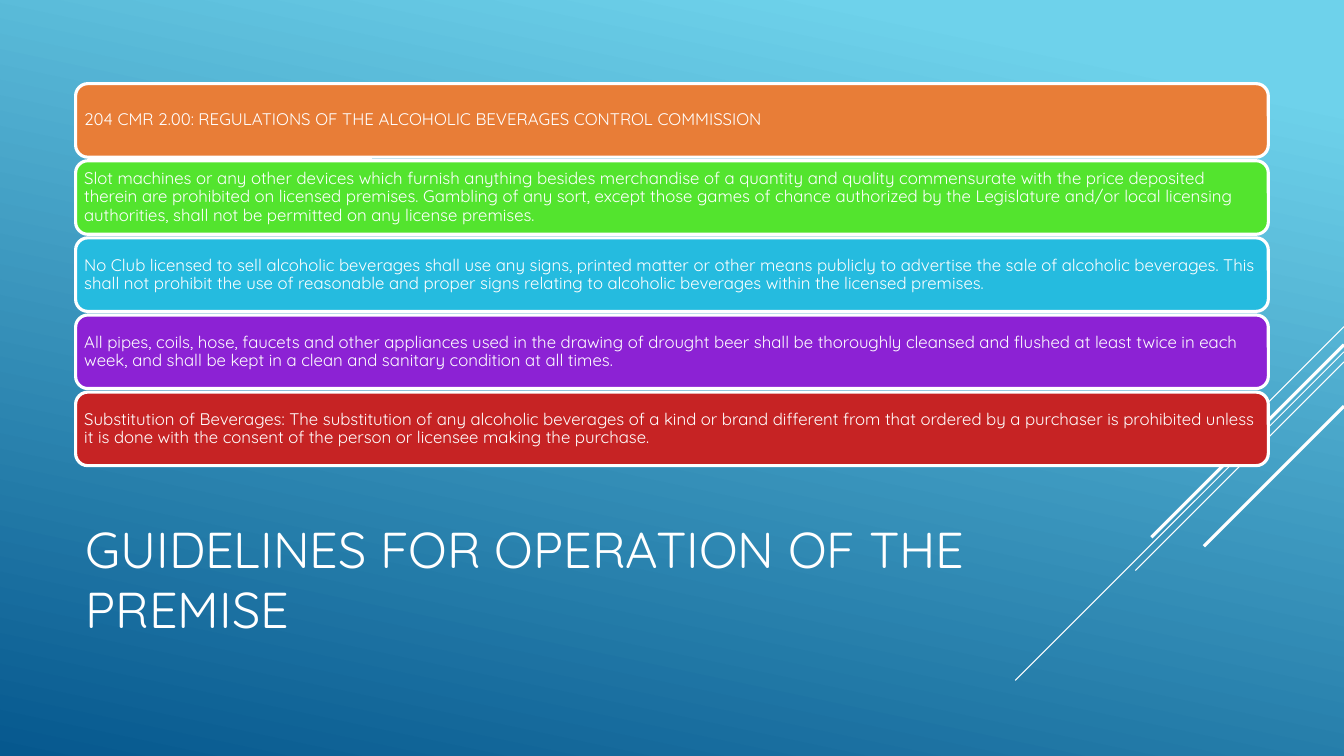
"""Build the slide on guidelines for operation of the premise."""
from lxml import etree
from pptx import Presentation
from pptx import util as u
from pptx.dml.color import RGBColor
from pptx.enum import shapes, text
from pptx.oxml.ns import qn

FONT = "Quicksand"
WHITE = "FFFFFF"
TITLE = "GUIDELINES FOR OPERATION OF THE PREMISE"
TITLE_BOX = (0.75, 4.91, 9.33, 1.65)
BACKGROUND = [("6ED2EB", 0.1), ("06588E", 1)]
BACKGROUND_ANGLE = 258
RULES = [
    ("E87D37", "204 CMR 2.00: REGULATIONS OF THE ALCOHOLIC BEVERAGES CONTROL COMMISSION"),
    ("53E42E", "Slot machines or any other devices which furnish anything besides merchandise of a quantity and quality commensurate with the price deposited therein are prohibited on licensed premises. Gambling of any sort, except those games of chance authorized by the Legislature and/or local licensing authorities, shall not be permitted on any license premises."),
    ("25BBDF", "No Club licensed to sell alcoholic beverages shall use any signs, printed matter or other means publicly to advertise the sale of alcoholic beverages. This shall not prohibit the use of reasonable and proper signs relating to alcoholic beverages within the licensed premises."),
    ("8C22D4", "All pipes, coils, hose, faucets and other appliances used in the drawing of drought beer shall be thoroughly cleansed and flushed at least twice in each week, and shall be kept in a clean and sanitary condition at all times."),
    ("C62324", "Substitution of Beverages: The substitution of any alcoholic beverages of a kind or brand different from that ordered by a purchaser is prohibited unless it is done with the consent of the person or licensee making the purchase."),
]
BAR_LEFT, BAR_TOP, BAR_WIDTH, BAR_HEIGHT, BAR_PITCH = 0.75, 0.83, 11.83, 0.73, 0.765
SLIDE_WIDTH, SLIDE_HEIGHT = 13.33, 7.5
STREAKS = [
    (3.24, 1, 0.75),
    (3.49, 3.26, 0.75),
    (3.59, 2.07, 0.75),
    (3.42, 1.91, 2.25),
    (4.03, 1.39, 2.25),
]
RULE_FRAME = {name: u.Inches(0.05) for name in
              ("margin_left", "margin_top", "margin_right", "margin_bottom")}
RULE_PARAGRAPH = {"line_spacing": 0.9, "space_after": u.Pt(4.2)}


def color(value):
    """Turn a hex string into a colour."""
    return RGBColor.from_string(value)


def inches(*lengths):
    """Turn numbers into lengths in inches."""
    return [u.Inches(length) for length in lengths]


def assign(target, values):
    """Set attributes from a dict of format values."""
    for name, value in values.items():
        setattr(target, name, value)


def write(shape, words, size, frame_format, paragraph_format):
    """Write one left-aligned white paragraph, centred vertically."""
    frame = shape.text_frame
    assign(frame, {"word_wrap": True, "vertical_anchor": text.MSO_ANCHOR.MIDDLE,
                   **frame_format})
    paragraph = frame.paragraphs[0]
    paragraph.text = words
    assign(paragraph, {"alignment": text.PP_ALIGN.LEFT, **paragraph_format})
    assign(paragraph.font, {"name": FONT, "size": u.Pt(size)})
    paragraph.font.color.rgb = color(WHITE)


def outline(line, width):
    """Give a line its white colour and width."""
    line.color.rgb = color(WHITE)
    line.width = u.Pt(width)


def paint_background(slide):
    """Fill the background with the gradient."""
    fill = slide.background.fill
    fill.gradient()
    fill.gradient_angle = BACKGROUND_ANGLE
    for stop, (value, position) in zip(fill.gradient_stops, BACKGROUND):
        stop.color.rgb = color(value)
        stop.position = position


def add_streak(slide, top, run, width):
    """Draw a 45-degree line from the right edge down to the left."""
    streak = slide.shapes.add_connector(
        shapes.MSO_CONNECTOR.STRAIGHT,
        *inches(SLIDE_WIDTH, top, SLIDE_WIDTH - run, top + run))
    outline(streak.line, width)
    etree.SubElement(streak._element.spPr, qn("a:effectLst"))


def add_rule(slide, index, fill, words):
    """Draw one rounded bar with its rule."""
    bar = slide.shapes.add_shape(
        shapes.MSO_SHAPE.ROUNDED_RECTANGLE,
        *inches(BAR_LEFT, BAR_TOP + index * BAR_PITCH, BAR_WIDTH, BAR_HEIGHT))
    bar.shadow.inherit = False
    bar.fill.solid()
    bar.fill.fore_color.rgb = color(fill)
    outline(bar.line, 2.25)
    write(bar, words, 12, RULE_FRAME, RULE_PARAGRAPH)


def main():
    """Build and save the presentation."""
    presentation = Presentation()
    assign(presentation, {"slide_width": u.Inches(SLIDE_WIDTH),
                          "slide_height": u.Inches(SLIDE_HEIGHT)})
    slide = presentation.slides.add_slide(presentation.slide_layouts[6])
    paint_background(slide)
    for streak in STREAKS:
        add_streak(slide, *streak)
    write(slide.shapes.add_textbox(*inches(*TITLE_BOX)), TITLE, 36, {}, {})
    for index, rule in enumerate(RULES):
        add_rule(slide, index, *rule)
    presentation.save("out.pptx")


if __name__ == "__main__":
    main()
